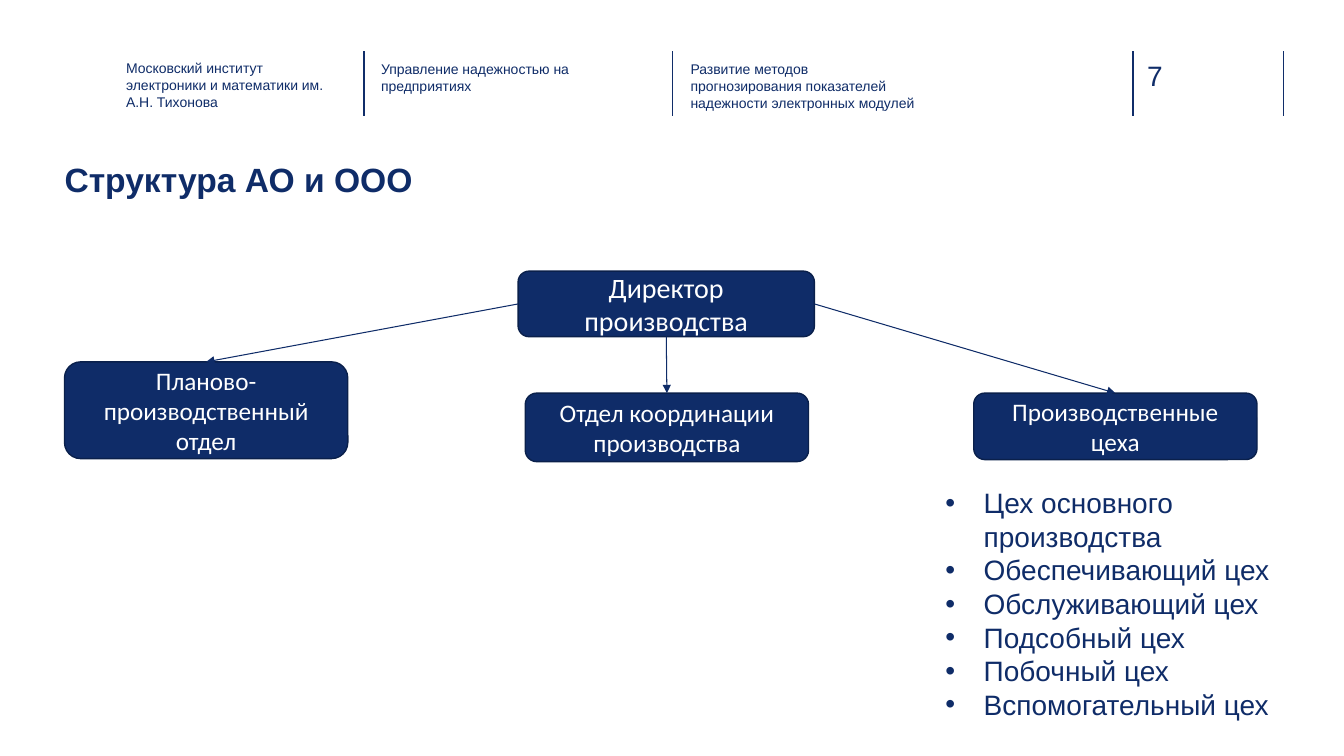
from dataclasses import dataclass

import pptx
import pptx.dml.color
import pptx.enum.shapes
import pptx.enum.text
import pptx.oxml
import pptx.oxml.ns
import pptx.util
from pptx.enum.text import MSO_ANCHOR, PP_ALIGN

SLIDE_WIDTH = pptx.util.Inches(13.33)
SLIDE_HEIGHT = pptx.util.Inches(7.5)
NAVY = "0F2C68"
HEADER_NAVY = "102D69"
OUTLINE_NAVY = "0A204B"
WHITE = "FFFFFF"
LEFT_SIDE, BOTTOM_SIDE, RIGHT_SIDE, TOP_SIDE = 1, 2, 3, 0
BULLET_INDENT = pptx.util.Inches(0.38)


@dataclass(frozen=True)
class Area:
    """A rectangle in percent of the slide's width and height."""
    left: float
    top: float
    width: float
    height: float

    def lengths(self) -> tuple:
        return (across(self.left), down(self.top),
                across(self.width), down(self.height))


@dataclass(frozen=True)
class HeaderText:
    text: str
    area: Area
    size: int = 10
    color: str = NAVY


@dataclass(frozen=True)
class Department:
    text: str
    area: Area
    director_side: int


DIVIDERS = (27.08, 50.03, 84.3, 95.48)
DIVIDER_TOP, DIVIDER_BOTTOM = 6.8, 15.33

HEADER_TEXTS = (
    HeaderText("Московский институт электроники и математики им. А.Н. Тихонова",
               Area(9.38, 7.87, 15.6, 6)),
    HeaderText("Управление надежностью на предприятиях",
               Area(28.35, 8, 16.95, 6)),
    HeaderText("Развитие методов прогнозирования показателей "
               "надежности электронных модулей", Area(51.38, 8, 16.95, 6)),
    HeaderText("7", Area(85.35, 7.73, 5.48, 4.53), 20, HEADER_NAVY),
)

TITLE_AREA = Area(4.8, 21.07, 89.55, 10.27)
DIRECTOR_AREA = Area(38.55, 35.87, 22.05, 8.67)
DEPARTMENTS = (
    Department("Планово-производственный отдел",
               Area(4.8, 47.87, 21.08, 12.8), LEFT_SIDE),
    Department("Отдел координации производства",
               Area(39.08, 52, 21.08, 9.07), BOTTOM_SIDE),
    Department("Производственные цеха",
               Area(72.45, 52, 21.08, 8.8), RIGHT_SIDE),
)

WORKSHOPS_AREA = Area(69.6, 63.6, 26.85, 32.8)
WORKSHOPS = ("Цех основного производства", "Обеспечивающий цех",
             "Обслуживающий цех", "Подсобный цех", "Побочный цех",
             "Вспомогательный цех")


def across(percent: float) -> int:
    return round(SLIDE_WIDTH * percent / 100)


def down(percent: float) -> int:
    return round(SLIDE_HEIGHT * percent / 100)


def rgb(color: str) -> pptx.dml.color.RGBColor:
    return pptx.dml.color.RGBColor.from_string(color)


def add_bullet(paragraph) -> None:
    properties = paragraph._p.get_or_add_pPr()
    properties.set("marL", str(BULLET_INDENT))
    properties.set("indent", str(-BULLET_INDENT))
    namespace = pptx.oxml.ns.nsdecls("a")
    for markup in (
            f'<a:buClr {namespace}><a:srgbClr val="{NAVY}"/></a:buClr>',
            f'<a:buFont {namespace} typeface="Arial"/>',
            f'<a:buChar {namespace} char="•"/>'):
        properties.append(pptx.oxml.parse_xml(markup))


def write_text(shape, *lines: str, size: int, color: str = NAVY,
               font: str = "Arial", bold: bool = False,
               align: PP_ALIGN = PP_ALIGN.LEFT,
               anchor: MSO_ANCHOR = MSO_ANCHOR.TOP,
               margins: tuple = (0, 0), bullets: bool = False) -> None:
    """Fill a shape with one paragraph per line; margins are in inches."""
    frame = shape.text_frame
    frame.word_wrap = True
    frame.auto_size = pptx.enum.text.MSO_AUTO_SIZE.NONE
    frame.vertical_anchor = anchor
    frame.margin_left = frame.margin_right = pptx.util.Inches(margins[0])
    frame.margin_top = frame.margin_bottom = pptx.util.Inches(margins[1])
    for index, line in enumerate(lines):
        paragraph = frame.add_paragraph() if index else frame.paragraphs[0]
        paragraph.alignment = align
        if bullets:
            add_bullet(paragraph)
        run = paragraph.add_run()
        run.text = line
        run.font.name = font
        run.font.size = pptx.util.Pt(size)
        run.font.bold = bold
        run.font.color.rgb = rgb(color)


def add_line(slide, color: str, width: float, start: tuple = (0, 0),
             end: tuple = (0, 0)):
    """Draw a line without shadow between two points in percent."""
    line = slide.shapes.add_connector(
        pptx.enum.shapes.MSO_CONNECTOR.STRAIGHT,
        across(start[0]), down(start[1]), across(end[0]), down(end[1]))
    line.line.color.rgb = rgb(color)
    line.line.width = pptx.util.Pt(width)
    namespace = pptx.oxml.ns.nsdecls("a")
    line._element.spPr.append(
        pptx.oxml.parse_xml(f"<a:effectLst {namespace}/>"))
    return line


def add_arrow(slide, source, source_side: int, target) -> None:
    arrow = add_line(slide, NAVY, 0.75)
    arrow.begin_connect(source, source_side)
    arrow.end_connect(target, TOP_SIDE)
    namespace = pptx.oxml.ns.nsdecls("a")
    arrow.line._get_or_add_ln().append(
        pptx.oxml.parse_xml(f'<a:tailEnd {namespace} type="triangle"/>'))


def add_unit(slide, text: str, area: Area, size: int):
    """Add a rounded box of the organisation chart."""
    unit = slide.shapes.add_shape(
        pptx.enum.shapes.MSO_SHAPE.ROUNDED_RECTANGLE, *area.lengths())
    unit.shadow.inherit = False
    unit.fill.solid()
    unit.fill.fore_color.rgb = rgb(NAVY)
    unit.line.color.rgb = rgb(OUTLINE_NAVY)
    unit.line.width = pptx.util.Pt(1)
    write_text(unit, text, size=size, color=WHITE, font="Calibri",
               align=PP_ALIGN.CENTER, anchor=MSO_ANCHOR.MIDDLE,
               margins=(0.1, 0.05))
    return unit


def add_header(slide) -> None:
    for position in DIVIDERS:
        add_line(slide, HEADER_NAVY, 1, (position, DIVIDER_TOP),
                 (position, DIVIDER_BOTTOM))
    for header in HEADER_TEXTS:
        box = slide.shapes.add_textbox(*header.area.lengths())
        write_text(box, header.text, size=header.size, color=header.color)


def add_title(slide) -> None:
    title = slide.shapes.title
    title.left, title.top, title.width, title.height = TITLE_AREA.lengths()
    write_text(title, "Структура АО и ООО", size=24, bold=True)


def add_structure(slide) -> None:
    director = add_unit(slide, "Директор производства", DIRECTOR_AREA, 20)
    for department in DEPARTMENTS:
        unit = add_unit(slide, department.text, department.area, 18)
        add_arrow(slide, director, department.director_side, unit)
    workshops = slide.shapes.add_textbox(*WORKSHOPS_AREA.lengths())
    write_text(workshops, *WORKSHOPS, size=20, margins=(0.1, 0.05),
               bullets=True)


def main() -> None:
    presentation = pptx.Presentation()
    presentation.slide_width = SLIDE_WIDTH
    presentation.slide_height = SLIDE_HEIGHT
    slide = presentation.slides.add_slide(presentation.slide_layouts[5])
    add_header(slide)
    add_title(slide)
    add_structure(slide)
    presentation.save("out.pptx")


if __name__ == "__main__":
    main()
